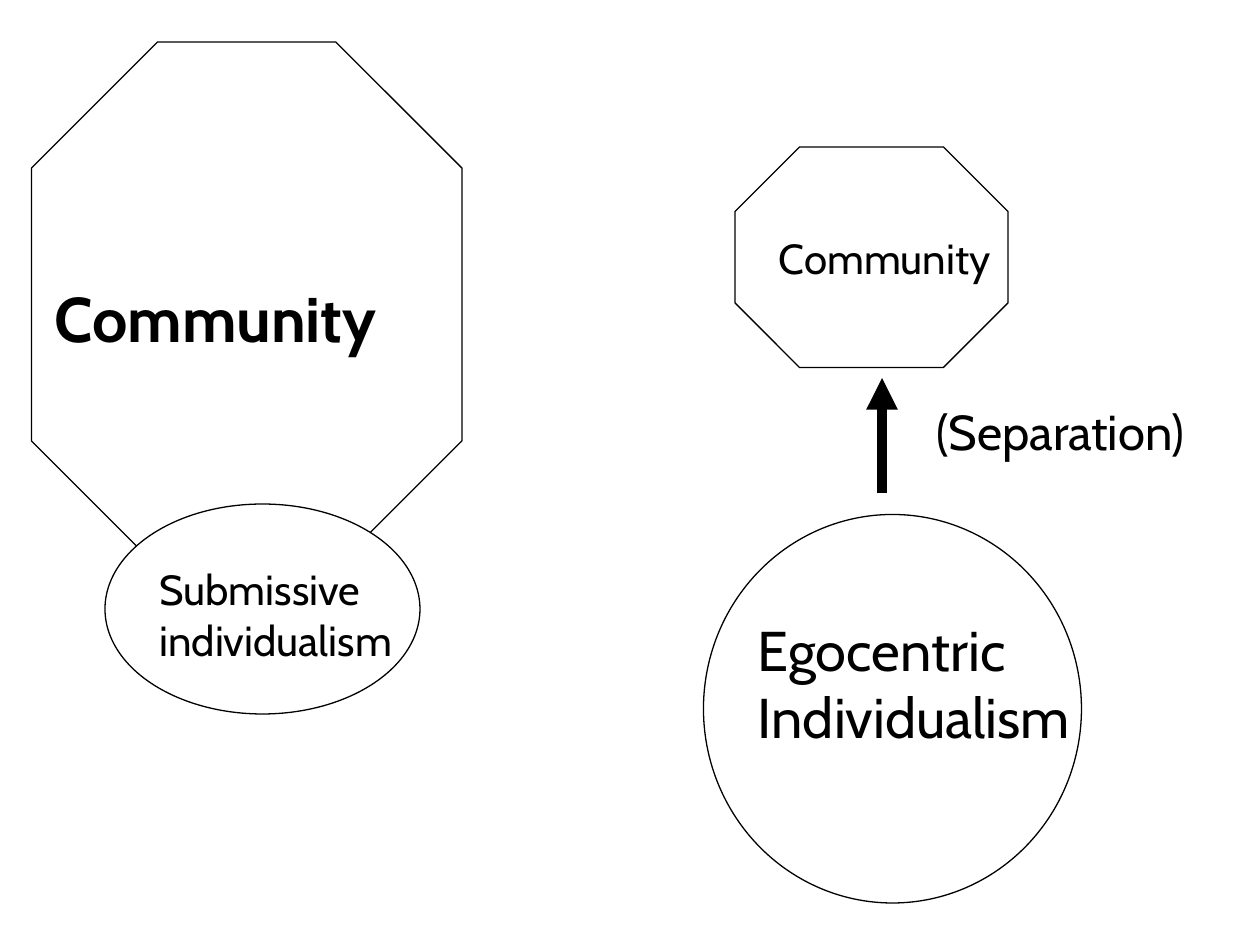
import math
from dataclasses import dataclass

from lxml import etree
from pptx import Presentation
from pptx import util as u
from pptx.dml import color
from pptx.enum import shapes, text
from pptx.oxml import ns


@dataclass(frozen=True)
class Theme:
    font: str = "Cabin"
    ink: color.RGBColor = color.RGBColor(0, 0, 0)
    paper: color.RGBColor = color.RGBColor(255, 255, 255)
    small: int = 24
    medium: int = 28
    large: int = 32
    heading: int = 36
    outline: float = 0.75
    arrow: int = 6


def write(box, content, theme, size, bold=False, wrap=False,
          anchor=text.MSO_ANCHOR.MIDDLE):
    frame = box.text_frame
    frame.word_wrap = wrap
    frame.vertical_anchor = anchor
    for index, line in enumerate(content.split("\n")):
        para = frame.add_paragraph() if index else frame.paragraphs[0]
        para.alignment = text.PP_ALIGN.LEFT
        span = para.add_run()
        span.text = line
        span.font.name = theme.font
        span.font.size = u.Pt(size)
        span.font.bold = bold
        span.font.color.rgb = theme.ink


class Painter:
    def __init__(self, page, theme):
        self.page = page
        self.theme = theme

    def shape(self, kind, *bounds, filled=True, outlined=True):
        box = self.page.shapes.add_shape(kind, *map(u.Pt, bounds))
        box.shadow.inherit = False
        if filled:
            box.fill.solid()
            box.fill.fore_color.rgb = self.theme.paper
        else:
            box.fill.background()
        if outlined:
            box.line.color.rgb = self.theme.ink
            box.line.width = u.Pt(self.theme.outline)
        else:
            box.line.fill.background()
        return box

    def octagon(self, *bounds):
        box = self.shape(shapes.MSO_SHAPE.OCTAGON, *bounds)
        box.adjustments[0] = 1 - math.sqrt(0.5)
        return box

    def ellipse(self, *bounds, filled=True):
        return self.shape(shapes.MSO_SHAPE.OVAL, *bounds, filled=filled)

    def heading(self, content, *bounds):
        box = self.page.shapes.add_textbox(*map(u.Pt, bounds))
        write(box, content, self.theme, size=self.theme.heading, bold=True,
              wrap=True, anchor=text.MSO_ANCHOR.TOP)
        return box

    def label(self, content, *bounds, size, filled=False):
        box = self.shape(shapes.MSO_SHAPE.RECTANGLE, *bounds,
                         filled=filled, outlined=False)
        write(box, content, self.theme, size=size)
        return box

    def arrow(self, *ends):
        link = self.page.shapes.add_connector(
            shapes.MSO_CONNECTOR.STRAIGHT, *map(u.Pt, ends))
        link.line.color.rgb = self.theme.ink
        link.line.width = u.Pt(self.theme.arrow)
        outline = link._element.spPr.find(ns.qn("a:ln"))
        etree.SubElement(outline, ns.qn("a:tailEnd"), type="triangle")
        etree.SubElement(link._element.spPr, ns.qn("a:effectLst"))
        return link


def main():
    theme = Theme()
    deck = Presentation()
    deck.slide_width, deck.slide_height = u.Pt(720), u.Pt(540)
    painter = Painter(deck.slides.add_slide(deck.slide_layouts[6]), theme)

    painter.octagon(18, 24, 246, 300)
    painter.octagon(420, 84, 156, 126)
    painter.ellipse(60, 288, 180, 120)
    painter.ellipse(402, 294, 216, 222, filled=False)

    painter.heading("Community", 24, 156, 252, 50)
    painter.label("Community", 438, 126, 120, 42, size=theme.small)
    painter.arrow(504, 282, 504, 216)
    painter.label("Egocentric\nIndividualism", 426, 354, 174, 72,
                  size=theme.large)
    painter.label("Submissive\nindividualism", 84, 324, 126, 54,
                  size=theme.small, filled=True)
    painter.label("(Separation)", 528, 234, 162, 24, size=theme.medium)

    deck.save("out.pptx")


if __name__ == "__main__":
    main()
